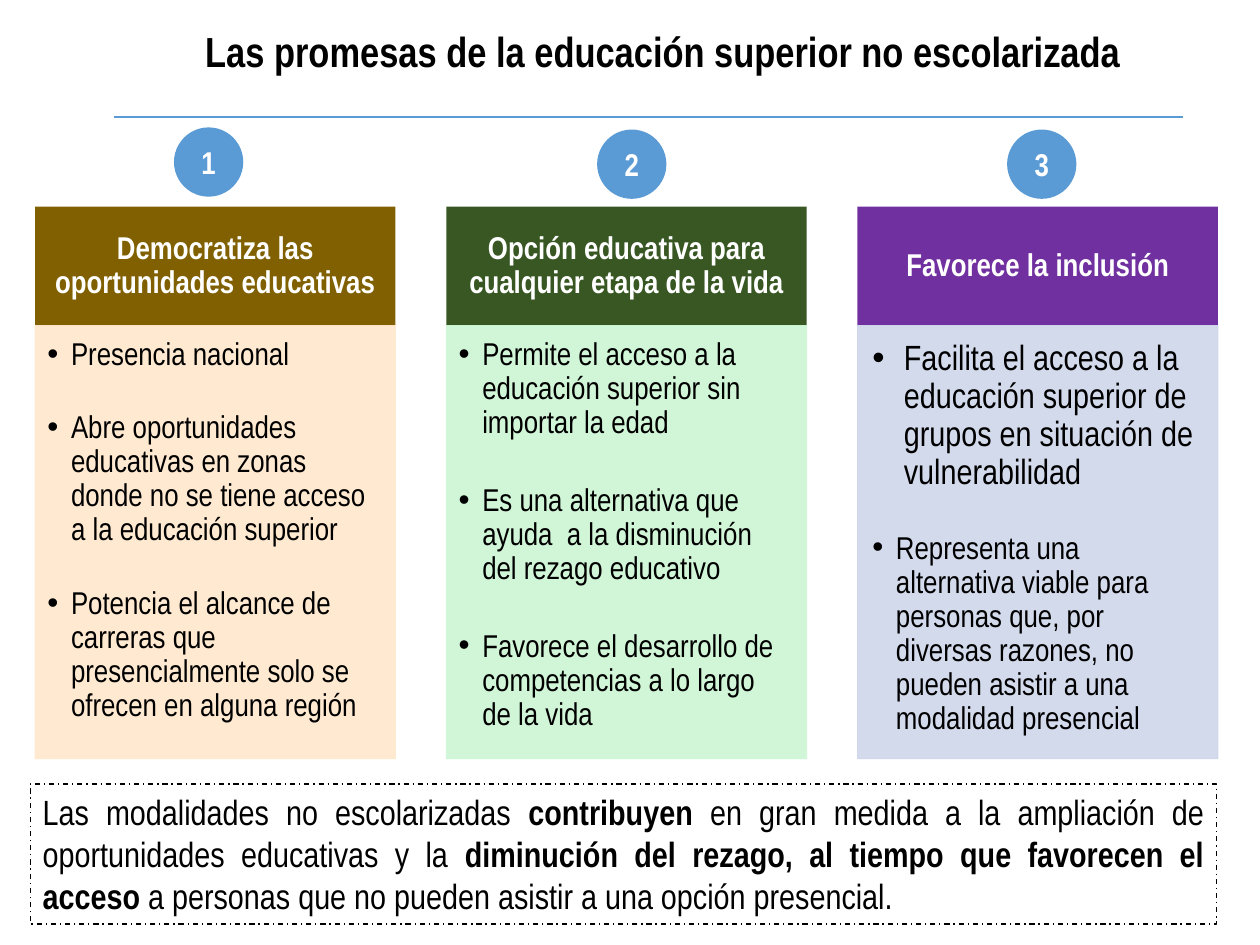
from lxml.etree import SubElement
from pptx import Presentation
from pptx.dml.color import RGBColor
from pptx.enum.dml import MSO_LINE
from pptx.enum.shapes import MSO_CONNECTOR, MSO_SHAPE
from pptx.enum.text import MSO_ANCHOR, PP_ALIGN
from pptx.oxml.ns import qn
from pptx.util import Pt

BLACK = RGBColor(0, 0, 0)
WHITE = RGBColor(0xFF, 0xFF, 0xFF)
BLUE = RGBColor(0x5B, 0x9B, 0xD5)
BROWN = RGBColor(0x80, 0x60, 0x00)
GREEN = RGBColor(0x38, 0x57, 0x23)
PURPLE = RGBColor(0x70, 0x30, 0xA0)
PEACH = RGBColor(0xFF, 0xE8, 0xCC)
MINT = RGBColor(0xCC, 0xF6, 0xD3)
LILAC = RGBColor(0xCF, 0xD6, 0xEA)

deck = Presentation()
deck.slide_width, deck.slide_height = Pt(720), Pt(540)
slide = deck.slides.add_slide(deck.slide_layouts[6])


def add_box(kind, left, top, width, height, fill, pads, anchor):
    box = slide.shapes.add_shape(kind, Pt(left), Pt(top), Pt(width), Pt(height))
    box.shadow.inherit = False
    box.line.fill.background()
    if fill is None:
        box.fill.background()
    else:
        box.fill.solid()
        box.fill.fore_color.rgb = fill
    frame = box.text_frame
    frame.word_wrap = True
    frame.vertical_anchor = anchor
    frame.margin_left, frame.margin_top, frame.margin_right, frame.margin_bottom = map(Pt, pads)
    return box


def add_run(para, text, size, color, bold=False):
    run = para.add_run()
    run.text = text
    run.font.name = "Arial Narrow"
    run.font.size = Pt(size)
    run.font.bold = bold
    run.font.color.rgb = color


PADS = (7.2, 3.6, 7.2, 3.6)
cards = [
    ("Democratiza las oportunidades educativas", BROWN, PEACH, 99.4, 72.8, 22.5, (7.2, 7.2, 10, 11.5), [
        ("Presencia nacional", 18, 13.5),
        ("Abre oportunidades educativas en zonas donde no se tiene acceso a la educación superior", 18, 13.5),
        ("Potencia el alcance de carreras que presencialmente solo se ofrecen en alguna región", 18, 13.5),
    ]),
    ("Opción educativa para cualquier etapa de la vida", GREEN, MINT, 341.2, 74, 25, (7.2, 7.2, 10, 11.5), [
        ("Permite el acceso a la educación superior sin importar la edad", 18, 13.5),
        ("Es una alternativa que ayuda  a la disminución del rezago educativo", 18, 13.5),
        ("Favorece el desarrollo de competencias a lo largo de la vida", 18, 13.5),
    ]),
    ("Favorece la inclusión", PURPLE, LILAC, 575.5, 74, 23, (8.5, 8.5, 11.5, 12), [
        ("Facilita el acceso a la educación superior de grupos en situación de vulnerabilidad", 20, 18),
        ("Representa una alternativa viable para personas que, por diversas razones, "
         "no pueden asistir a una modalidad presencial", 18, 13.5),
    ]),
]

for num, (head, dark, pale, dot, top, gap, pads, items) in enumerate(cards):
    left = 20 + 235 * num
    title = add_box(MSO_SHAPE.RECTANGLE, left, 118, 206, 68, dark, (10, 5.8, 10, 5.8), MSO_ANCHOR.MIDDLE)
    para = title.text_frame.paragraphs[0]
    para.alignment = PP_ALIGN.CENTER
    para.line_spacing = 0.9
    add_run(para, head, 18, WHITE, True)

    body = add_box(MSO_SHAPE.RECTANGLE, left, 186, 206, 247.5, pale, pads, MSO_ANCHOR.TOP)
    body.line.color.rgb = pale
    body.line.width = Pt(0.5)
    for tint in body._element.spPr.iter(qn("a:srgbClr")):
        SubElement(tint, qn("a:alpha"), val="90000")
    for row, (text, size, dent) in enumerate(items):
        para = body.text_frame.paragraphs[0] if row == 0 else body.text_frame.add_paragraph()
        para.alignment = PP_ALIGN.LEFT
        para.line_spacing = 0.9
        if row:
            para.space_before = Pt(gap)
        props = para._p.get_or_add_pPr()
        props.set("marL", str(Pt(dent)))
        props.set("indent", str(-Pt(dent)))
        SubElement(props, qn("a:buFont"), typeface="Arial")
        SubElement(props, qn("a:buChar"), char="•")
        add_run(para, text, size, BLACK)

    badge = add_box(MSO_SHAPE.OVAL, dot, top, 39.6, 39.6, BLUE, PADS, MSO_ANCHOR.MIDDLE)
    para = badge.text_frame.paragraphs[0]
    para.alignment = PP_ALIGN.CENTER
    add_run(para, str(num + 1), 18, WHITE, True)

note = add_box(MSO_SHAPE.RECTANGLE, 17.3, 448, 678, 80, None, PADS, MSO_ANCHOR.TOP)
note.line.color.rgb = BLACK
note.line.width = Pt(0.75)
note.line.dash_style = MSO_LINE.DASH_DOT
para = note.text_frame.paragraphs[0]
para.alignment = PP_ALIGN.JUSTIFY
for text, bold in [
    ("Las modalidades no escolarizadas ", False),
    ("contribuyen", True),
    (" en gran medida a la ampliación de oportunidades educativas y la ", False),
    ("diminución del rezago, al tiempo que favorecen el acceso", True),
    (" a personas que no pueden asistir a una opción presencial.", False),
]:
    add_run(para, text, 20, BLACK, bold)

rule = slide.shapes.add_connector(MSO_CONNECTOR.STRAIGHT, Pt(65), Pt(67), Pt(676), Pt(67))
rule.line.color.rgb = BLUE
rule.line.width = Pt(1)
SubElement(rule._element.spPr, qn("a:effectLst"))

title = slide.shapes.add_textbox(Pt(68.4), Pt(10.8), Pt(620.6), Pt(36))
title.text_frame.word_wrap = True
para = title.text_frame.paragraphs[0]
para.alignment = PP_ALIGN.CENTER
add_run(para, "Las promesas de la educación superior no escolarizada", 24, BLACK, True)

deck.save("out.pptx")
